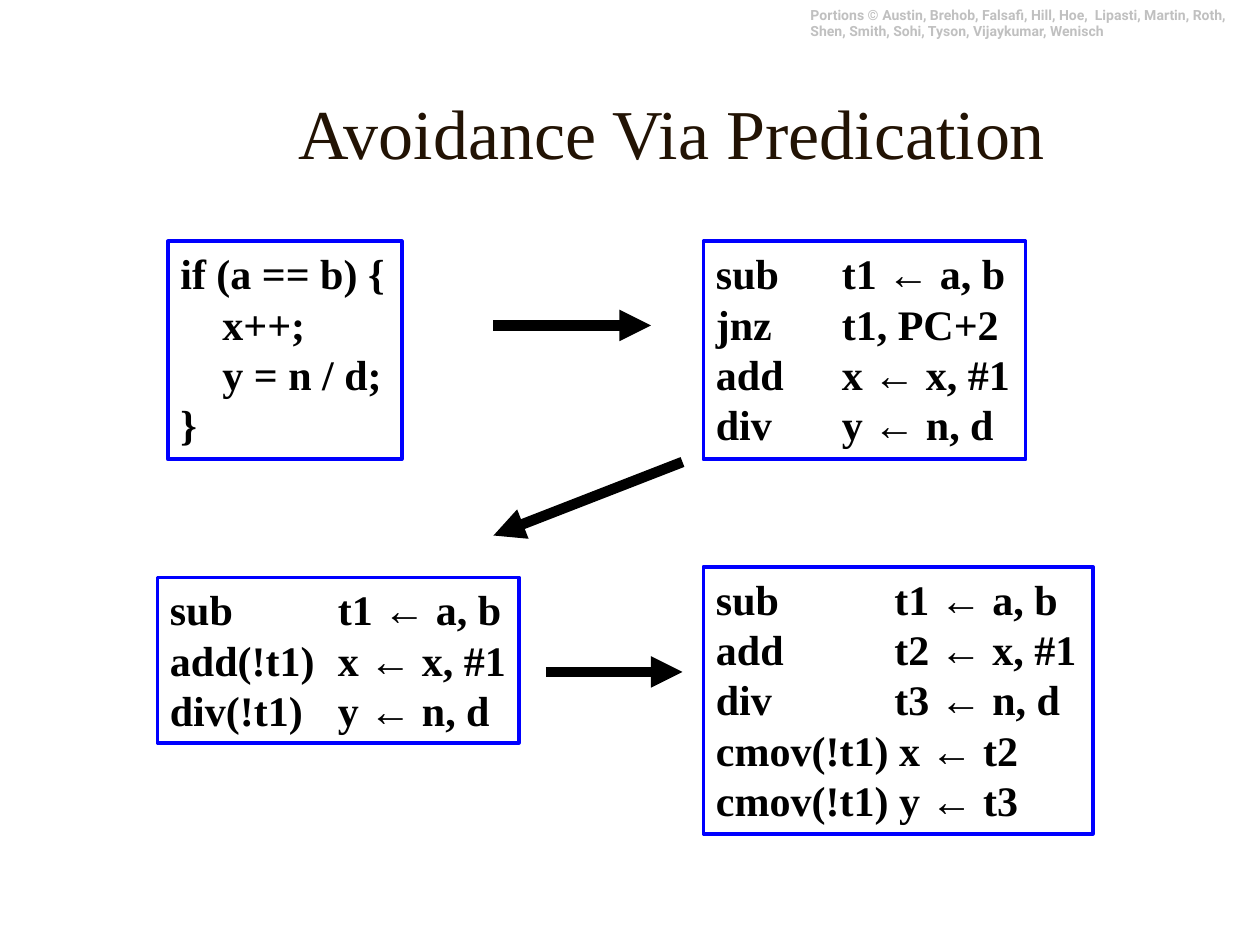
from dataclasses import dataclass

from lxml.etree import SubElement
from pptx import Presentation
from pptx.dml.color import RGBColor
from pptx.enum.shapes import MSO_CONNECTOR, MSO_SHAPE
from pptx.enum.text import MSO_ANCHOR, MSO_AUTO_SIZE, PP_ALIGN
from pptx.oxml import parse_xml
from pptx.oxml.ns import nsdecls, qn
from pptx.util import Pt


@dataclass(frozen=True)
class Theme:
    serif: str = "Times New Roman"
    sans: str = "Roboto"
    title: str = "221304"
    code: str = "000000"
    credit: str = "C0C0C0"
    border: str = "0000FF"
    title_size: int = 40
    code_size: int = 24
    credit_size: int = 8


theme = Theme()


def style(para, name, size, color, bold):
    font = para.font
    font.name, font.size, font.bold = name, Pt(size), bold
    font.color.rgb = RGBColor.from_string(color)


deck = Presentation()
deck.slide_width, deck.slide_height = Pt(720), Pt(540)
page = deck.slides.add_slide(deck.slide_layouts[5])

# Credit line
credit = page.shapes.add_textbox(Pt(456), Pt(0), Pt(264), Pt(26.6))
credit.text_frame.word_wrap = True
credit.text_frame.text = (
    "Portions © Austin, Brehob, Falsafi, Hill, Hoe,  Lipasti, Martin, Roth, "
    "Shen, Smith, Sohi, Tyson, Vijaykumar, Wenisch"
)
style(credit.text_frame.paragraphs[0], theme.sans, theme.credit_size, theme.credit, True)

# Title
title = page.shapes.title
title.left, title.top, title.width, title.height = Pt(84), Pt(30), Pt(600), Pt(90)
title.text_frame.text = "Avoidance Via Predication"
title.text_frame.auto_size = MSO_AUTO_SIZE.NONE
title.text_frame.vertical_anchor = MSO_ANCHOR.MIDDLE
heading = title.text_frame.paragraphs[0]
heading.alignment = PP_ALIGN.CENTER
style(heading, theme.serif, theme.title_size, theme.title, False)

# Code boxes: left, top, width, height, tab stop, indented lines, lines
code_boxes = [
    (96, 138, 133.5, 124.5, 72, (1, 2),
     ["if (a == b) {", "x++;", "y = n / d;", "}"]),
    (402, 138, 184, 124.5, 72, (),
     ["sub\tt1 ← a, b", "jnz\tt1, PC+2", "add\tx ← x, #1", "div\ty ← n, d"]),
    (90, 330, 206.5, 94.5, 96, (),
     ["sub\tt1 ← a, b", "add(!t1)\tx ← x, #1", "div(!t1)\ty ← n, d"]),
    (402, 324, 222.5, 152.5, 102, (),
     ["sub\tt1 ← a, b", "add\tt2 ← x, #1", "div\tt3 ← n, d",
      "cmov(!t1) x ← t2", "cmov(!t1) y ← t3"]),
]
for left, top, width, height, tab_stop, indented, lines in code_boxes:
    box = page.shapes.add_shape(
        MSO_SHAPE.RECTANGLE, Pt(left), Pt(top), Pt(width), Pt(height))
    box.shadow.inherit = False
    box.fill.background()
    box.line.color.rgb = RGBColor.from_string(theme.border)
    box.line.width = Pt(2.25)
    frame = box.text_frame
    frame.word_wrap = False
    frame.auto_size = MSO_AUTO_SIZE.SHAPE_TO_FIT_TEXT
    frame.vertical_anchor = MSO_ANCHOR.TOP
    frame.text = "\n".join(lines)
    for index, para in enumerate(frame.paragraphs):
        para.alignment = PP_ALIGN.LEFT
        style(para, theme.serif, theme.code_size, theme.code, True)
        properties = para._p.get_or_add_pPr()
        if index in indented:
            properties.set("marL", str(Pt(24)))
        if "\t" in lines[index]:
            properties.insert(0, parse_xml(
                f'<a:tabLst {nsdecls("a")}><a:tab pos="{Pt(tab_stop)}" algn="l"/></a:tabLst>'))

# Arrows between the steps
for start_x, start_y, end_x, end_y in [
    (282, 186, 372, 186),
    (390, 264, 282, 306),
    (312, 384, 390, 384),
]:
    arrow = page.shapes.add_connector(
        MSO_CONNECTOR.STRAIGHT, Pt(start_x), Pt(start_y), Pt(end_x), Pt(end_y))
    arrow.line.color.rgb = RGBColor.from_string(theme.code)
    arrow.line.width = Pt(6)
    SubElement(arrow.line._get_or_add_ln(), qn("a:tailEnd"), type="triangle")
    SubElement(arrow._element.spPr, qn("a:effectLst"))

deck.save("out.pptx")
